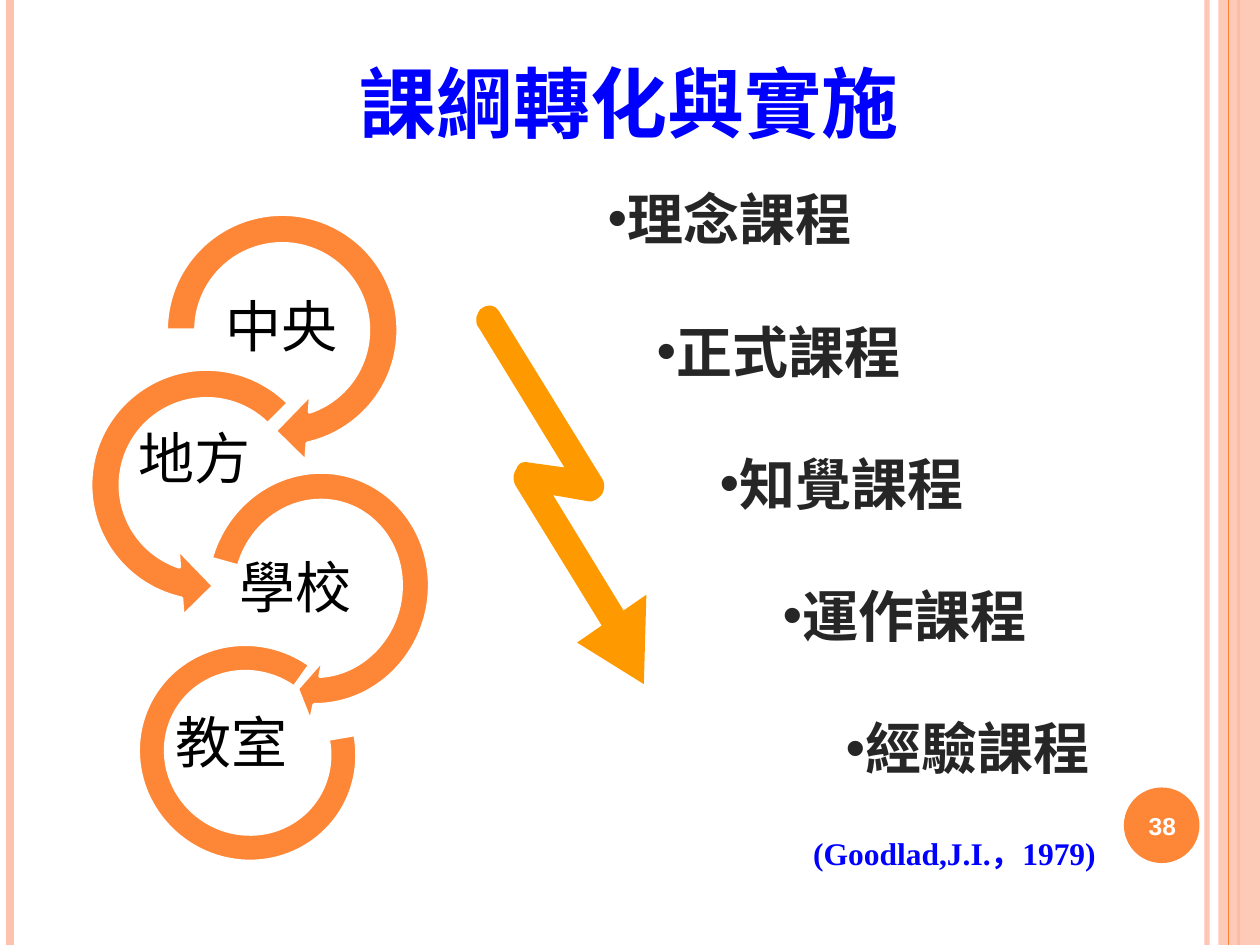
"""Build a slide on how curriculum guidelines pass from ideal to experienced curriculum."""
from lxml import etree
from pptx import Presentation
from pptx.dml.color import RGBColor
from pptx.enum.shapes import MSO_CONNECTOR, MSO_SHAPE
from pptx.enum.text import MSO_ANCHOR, MSO_AUTO_SIZE, PP_ALIGN
from pptx.oxml.ns import qn
from pptx.util import Inches, Pt

CENTER, LEFT = PP_ALIGN.CENTER, PP_ALIGN.LEFT
MIDDLE, TOP = MSO_ANCHOR.MIDDLE, MSO_ANCHOR.TOP
CIRCULAR, LEFT_CIRCULAR = MSO_SHAPE.CIRCULAR_ARROW, MSO_SHAPE.LEFT_CIRCULAR_ARROW
BLOCK_ARC, OVAL, RECTANGLE = MSO_SHAPE.BLOCK_ARC, MSO_SHAPE.OVAL, MSO_SHAPE.RECTANGLE

THEME = {
    "orange": "FE8637", "peach": "FEC3AE", "amber": "FF9900", "blue": "0000FF",
    "ink": "262626", "black": "000000", "white": "FFFFFF",
    "cjk": "Noto Sans CJK SC", "serif": "Times New Roman", "sans": "Arial",
    "title": 44, "body": 32, "source": 18, "number": 14,
}

TITLE = "課綱轉化與實施"
CURRICULA = ["理念課程", "正式課程", "知覺課程", "運作課程", "經驗課程"]
SOURCE = "(Goodlad,J.I.，1979)"
NUMBER = "38"

STRIPES = [(9.58, "peach", 3, 93), (0.08, "peach", 4.5, 100), (9.83, "orange", 1.5, 100)]
INNER_STRIPE = (9.75, "orange", 0.75, 100)

RINGS = [
    (CIRCULAR, (1.17, 1.55, 2.14, 2.14), 0, (0.11, 11.42, 45, 108, 0.125)),
    (LEFT_CIRCULAR, (0.57, 2.78, 2.14, 2.14), 0, (0.11, 11.42, 63, 189, 0.125)),
    (BLOCK_ARC, (1.11, 5.1, 1.71, 1.75), 125.3, (135, 108, 0.127)),
    (CIRCULAR, (1.5, 3.6, 2.05, 2.14), 15.6, (0.11, 6.69, 45, 108, 0.125)),
]
LEVELS = [
    ("中央", (1.64, 2.32, 1.19, 0.59)),
    ("地方", (0.95, 3.37, 1.19, 0.58)),
    ("學校", (1.75, 4.36, 1.19, 0.65)),
]
CLASSROOM = ("教室", (1.19, 5.57, 1.32, 0.64))

BOLT = [
    [(3.78, 2.52)],
    [(3.79, 2.5), (3.8, 2.46), (3.82, 2.45)],
    [(3.87, 2.41), (3.93, 2.42), (3.96, 2.47)],
    [(4.78, 3.8)],
    [(4.8, 3.83), (4.8, 3.88), (4.78, 3.92)],
    [(4.75, 3.96), (4.71, 3.98), (4.68, 3.98)],
    [(4.39, 3.93)],
    [(4.97, 4.88)],
    [(5, 4.93), (4.99, 5.01), (4.94, 5.05)],
    [(4.9, 5.08), (4.84, 5.07), (4.81, 5.02)],
    [(4.09, 3.85)],
    [(4.07, 3.81), (4.07, 3.76), (4.1, 3.72)],
    [(4.11, 3.68), (4.15, 3.66), (4.19, 3.67)],
    [(4.48, 3.71)],
    [(3.8, 2.6)],
    [(3.78, 2.58), (3.78, 2.55), (3.78, 2.52)],
]
ARROW_TIP = [[(4.58, 5.1)], [(5.11, 5.43)], [(5.13, 4.72)]]


def color(name):
    return RGBColor.from_string(THEME[name])


def paint(fill, name, opacity=100):
    fill.solid()
    fill.fore_color.rgb = color(name)
    if opacity < 100:
        node = fill._xPr.find(qn("a:solidFill"))[0]
        etree.SubElement(node, qn("a:alpha"), val=str(opacity * 1000))


def place(shape, box):
    shape.left, shape.top, shape.width, shape.height = map(Inches, box)


def finish(shape, name, opacity=100, outline=None):
    shape.shadow.inherit = False
    paint(shape.fill, name, opacity)
    if outline:
        paint(shape.line.fill, outline)
        shape.line.width = Pt(2)
    else:
        shape.line.fill.background()


def add_preset(slide, kind, box, name, **look):
    shape = slide.shapes.add_shape(kind, *map(Inches, box))
    finish(shape, name, **look)
    return shape


def add_stripe(slide, x, name, width, opacity):
    line = slide.shapes.add_connector(
        MSO_CONNECTOR.STRAIGHT, Inches(x), 0, Inches(x), Inches(7.5))
    paint(line.line.fill, name, opacity)
    line.line.width = Pt(width)
    etree.SubElement(line._element.spPr, qn("a:effectLst"))


def trace(segments, steps=8):
    points = [segments[0][0]]
    for segment in segments[1:]:
        if len(segment) == 1:
            points += segment
            continue
        curve = [points[-1], *segment]
        for step in range(1, steps + 1):
            t = step / steps
            weights = ((1 - t) ** 3, 3 * t * (1 - t) ** 2, 3 * t * t * (1 - t), t ** 3)
            points.append(tuple(sum(w * p[axis] for w, p in zip(weights, curve))
                                for axis in (0, 1)))
    return [(Inches(x), Inches(y)) for x, y in points]


def add_outline(slide, segments, name):
    start, *rest = trace(segments)
    builder = slide.shapes.build_freeform(*start, scale=1.0)
    builder.add_line_segments(rest, close=True)
    finish(builder.convert_to_shape(), name)


def write(shape, lines, *, size, font, ink, bold=True, align=CENTER, anchor=MIDDLE,
          inset=(0.1, 0.05, 0.1, 0.05), spacing=1.0, before=0, indents=None):
    frame = shape.text_frame
    frame.word_wrap = True
    frame.auto_size = MSO_AUTO_SIZE.NONE
    frame.vertical_anchor = anchor
    (frame.margin_left, frame.margin_top,
     frame.margin_right, frame.margin_bottom) = map(Inches, inset)
    for index, text in enumerate(lines):
        paragraph = frame.paragraphs[0] if index == 0 else frame.add_paragraph()
        paragraph.alignment = align
        paragraph.line_spacing = spacing
        paragraph.space_before = Pt(before if index else 0)
        if indents:
            properties = paragraph._p.get_or_add_pPr()
            properties.set("marL", str(Inches(indents[index])))
            properties.set("indent", "0")
            bullet_color = etree.SubElement(properties, qn("a:buClr"))
            etree.SubElement(bullet_color, qn("a:srgbClr"), val=THEME[ink])
            etree.SubElement(properties, qn("a:buFont"), typeface=THEME["sans"])
            etree.SubElement(properties, qn("a:buChar"), char="•")
        run = paragraph.add_run()
        run.text = text
        run.font.size, run.font.bold = Pt(THEME[size]), bold
        run.font.name, run.font.color.rgb = THEME[font], color(ink)
        if font == "cjk":
            latin = run._r.rPr.find(qn("a:latin"))
            latin.addnext(etree.Element(qn("a:ea"), typeface=THEME[font]))


def add_text(slide, text, box, **look):
    write(slide.shapes.add_textbox(*map(Inches, box)), [text], **look)


def main():
    presentation = Presentation()
    presentation.slide_width, presentation.slide_height = Inches(10), Inches(7.5)
    slide = presentation.slides.add_slide(presentation.slide_layouts[1])
    title, body = slide.placeholders[0], slide.placeholders[1]

    for stripe in STRIPES:
        add_stripe(slide, *stripe)
    add_preset(slide, RECTANGLE, (9.67, 0, 0.33, 7.5), "peach", opacity=87)
    add_stripe(slide, *INNER_STRIPE)
    add_preset(slide, OVAL, (8.92, 6.25, 0.6, 0.6), "orange")

    place(title, (1.48, 0.47, 7.03, 0.68))
    write(title, [TITLE], size="title", font="cjk", ink="blue")
    place(body, (2.56, 1.15, 6.24, 5.17))
    write(body, CURRICULA, size="body", font="cjk", ink="ink", anchor=TOP, spacing=1.5,
          before=18, indents=[0.22, *range(1, len(CURRICULA))])

    add_outline(slide, BOLT, "amber")
    add_outline(slide, ARROW_TIP, "amber")
    add_text(slide, NUMBER, (8.89, 6.27, 0.67, 0.57), size="number", font="sans", ink="white")
    add_text(slide, SOURCE, (6.34, 6.57, 2.47, 0.4), size="source", font="serif",
             ink="blue", anchor=TOP)

    for kind, box, rotation, adjustments in RINGS:
        ring = add_preset(slide, kind, box, "orange", outline="white")
        ring.rotation = rotation
        for index, value in enumerate(adjustments):
            ring.adjustments[index] = value
    label = {"size": "body", "font": "cjk", "ink": "black", "bold": False}
    for text, box in LEVELS:
        add_text(slide, text, box, inset=(0.02,) * 4, spacing=0.9, **label)
    text, box = CLASSROOM
    add_text(slide, text, box, align=LEFT, anchor=TOP, inset=(0.2, 0.05, 0.1, 0.05), **label)

    presentation.save("out.pptx")


if __name__ == "__main__":
    main()
